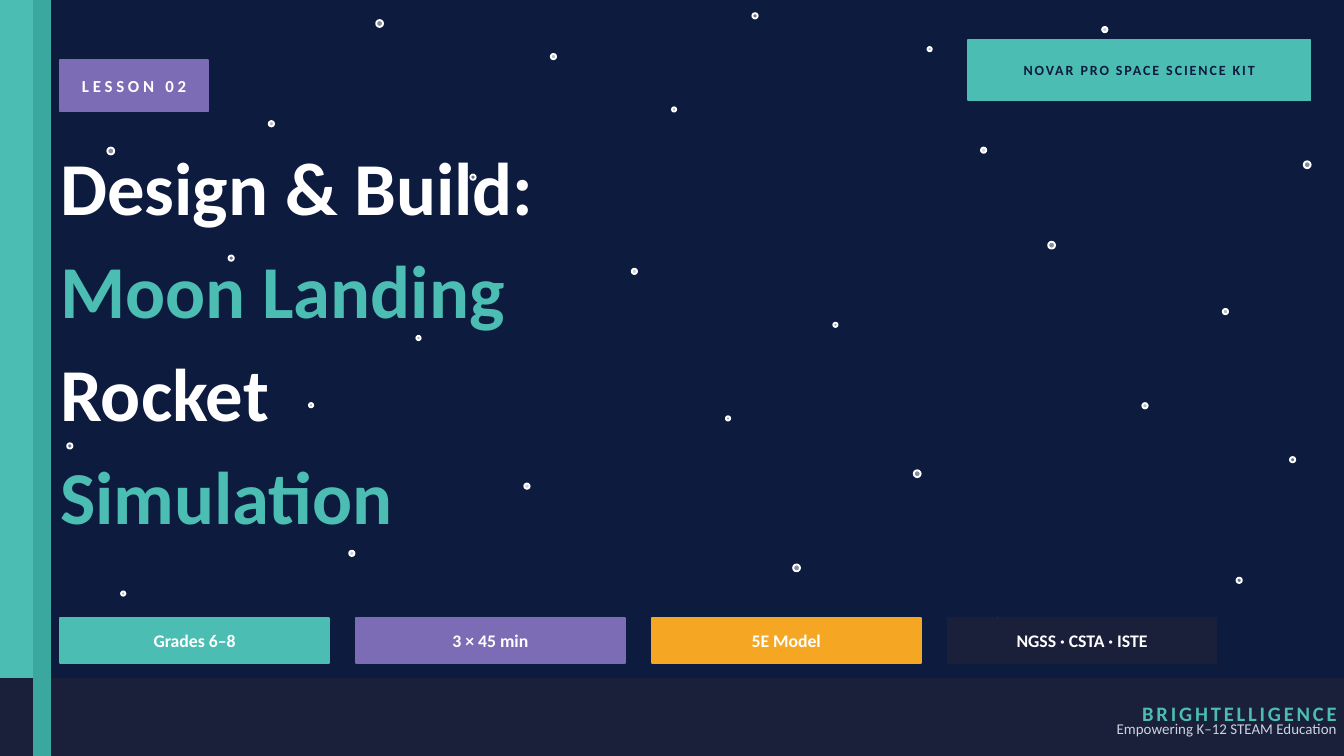
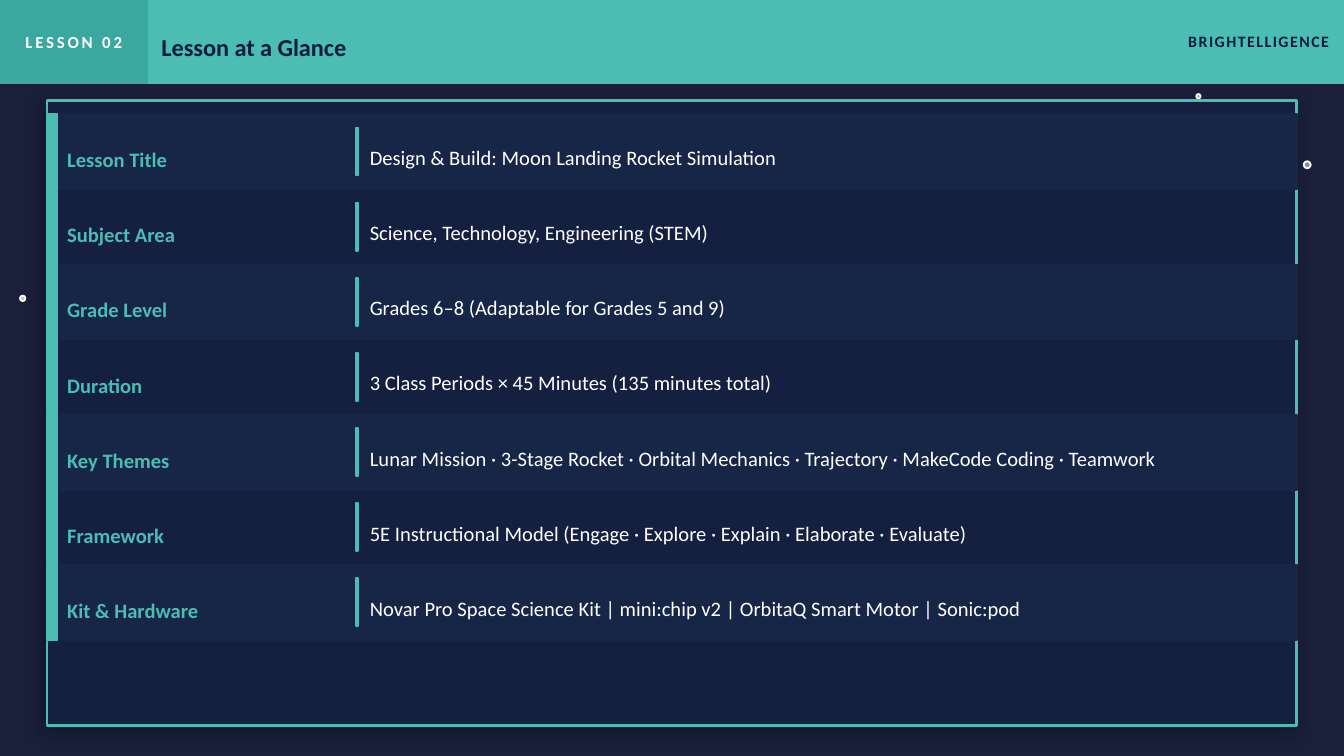
from dataclasses import dataclass

from lxml.etree import SubElement
from pptx import Presentation
from pptx.dml.color import RGBColor
from pptx.enum.shapes import MSO_SHAPE as Shape
from pptx.enum.text import MSO_ANCHOR as Anchor, MSO_AUTO_SIZE as AutoSize, PP_ALIGN as Align
from pptx.oxml.ns import qn
from pptx.util import Cm, Pt


@dataclass(frozen=True)
class Theme:
    font: str = "Calibri"
    navy: str = "0D1B3E"
    ink: str = "1A1F3A"
    panel: str = "152040"
    stripe: str = "172547"
    teal: str = "4BBDB3"
    deep_teal: str = "3AA89E"
    purple: str = "7B6CB5"
    orange: str = "F5A623"
    white: str = "FFFFFF"
    mist: str = "CBD5E1"
    cover_size: float = 40
    title_size: float = 13
    body_size: float = 11
    pill_size: float = 9.5
    tag_size: float = 9
    brand_size: float = 8.5
    tagline_size: float = 8
    kit_size: float = 7.5


theme = Theme()
brand = "BRIGHTELLIGENCE"


def add_box(slide, left, top, width, height, color, line_color=None, line_width=1, kind=Shape.RECTANGLE):
    shape = slide.shapes.add_shape(kind, Cm(left), Cm(top), Cm(width), Cm(height))
    shape.shadow.inherit = False
    shape.fill.solid()
    shape.fill.fore_color.rgb = RGBColor.from_string(color)
    shape.line.color.rgb = RGBColor.from_string(line_color or color)
    shape.line.width = Pt(line_width)
    return shape


def write(shape, lines, size, colors, bold=True, align=Align.LEFT, anchor=Anchor.MIDDLE,
          spacing=0, top=0, right=0, line_spacing=None):
    frame = shape.text_frame
    frame.word_wrap = True
    frame.auto_size = AutoSize.NONE
    frame.vertical_anchor = anchor
    frame.margin_left = frame.margin_bottom = 0
    frame.margin_top, frame.margin_right = Cm(top), Cm(right)
    frame.text = "\n".join(lines)
    for paragraph, color in zip(frame.paragraphs, colors):
        paragraph.alignment = align
        if line_spacing:
            paragraph.line_spacing = line_spacing
        font = paragraph.font
        font.name, font.size, font.bold = theme.font, Pt(size), bold
        font.color.rgb = RGBColor.from_string(color)
        if spacing:
            paragraph.runs[0].font._element.set("spc", str(round(spacing * 100)))


presentation = Presentation()
presentation.slide_width, presentation.slide_height = Cm(25.4), Cm(14.29)
title_only = presentation.slide_layouts[5]
cover = presentation.slides.add_slide(title_only)
glance = presentation.slides.add_slide(title_only)

star_sizes = {40: 0.1, 50: 0.13, 60: 0.08, 65: 0.08, 70: 0.1, 80: 0.1}
cover_stars = [
    (7.11, 0.38, 50), (10.41, 1.02, 70), (14.22, 0.25, 40), (17.53, 0.89, 65), (20.83, 0.51, 80),
    (2.03, 2.79, 50), (5.08, 2.29, 70), (8.89, 3.3, 40), (12.7, 2.03, 65), (18.54, 2.79, 80),
    (24.64, 3.05, 50), (4.32, 4.83, 40), (7.87, 6.35, 65), (11.94, 5.08, 80), (15.75, 6.1, 60),
    (19.81, 4.57, 50), (23.11, 5.84, 70), (1.27, 8.38, 40), (5.84, 7.62, 65), (9.91, 9.14, 80),
    (13.72, 7.87, 60), (17.27, 8.89, 50), (21.59, 7.62, 70), (24.38, 8.64, 40), (2.29, 11.18, 65),
    (6.6, 10.41, 80), (14.99, 10.67, 50), (18.8, 11.68, 70), (23.37, 10.92, 40),
]
glance_stars = [(22.61, 1.78, 60), (24.64, 3.05, 50), (0.38, 5.59, 70)]

for slide, background, stars in [(cover, theme.navy, cover_stars), (glance, theme.ink, glance_stars)]:
    slide.background.fill.solid()
    slide.background.fill.fore_color.rgb = RGBColor.from_string(background)
    for left, top, opacity in stars:
        size = star_sizes[opacity]
        star = add_box(slide, left, top, size, size, theme.white, kind=Shape.OVAL)
        fill_color = star.element.spPr.find(qn("a:solidFill"))[0]
        SubElement(fill_color, qn("a:alpha"), val=str(opacity * 1000))

add_box(cover, 0, 0, 0.64, 14.29, theme.teal)
add_box(cover, 0, 12.83, 25.4, 1.46, theme.ink)
add_box(cover, 0.64, 0, 0.3, 14.29, theme.deep_teal)
kit_badge = add_box(cover, 18.29, 0.76, 6.48, 1.14, theme.teal)
write(kit_badge, ["NOVAR PRO SPACE SCIENCE KIT"], theme.kit_size, [theme.navy], align=Align.CENTER, spacing=1)
lesson_badge = add_box(cover, 1.14, 1.14, 2.79, 0.97, theme.purple)
write(lesson_badge, ["LESSON 02"], theme.tag_size, [theme.white], align=Align.CENTER, spacing=2)

cover_title = cover.shapes.title
cover_title.element.getparent().append(cover_title.element)
cover_title.left, cover_title.top, cover_title.width, cover_title.height = Cm(1.14), Cm(2.41), Cm(16), Cm(9.14)
write(cover_title, ["Design & Build:", "Moon Landing", "Rocket", "Simulation"], theme.cover_size,
      [theme.white, theme.teal] * 2, anchor=Anchor.TOP, line_spacing=1.15)

pills = [("Grades 6–8", theme.teal), ("3 × 45 min", theme.purple),
         ("5E Model", theme.orange), ("NGSS · CSTA · ISTE", theme.ink)]
for index, (label, color) in enumerate(pills):
    pill = add_box(cover, 1.14 + index * 5.59, 11.68, 5.08, 0.86, color)
    write(pill, [label], theme.pill_size, [theme.white], align=Align.CENTER)

cover_brand = cover.shapes.add_textbox(Cm(19.05), Cm(12.95), Cm(6.22), Cm(1.07))
write(cover_brand, [brand], theme.body_size, [theme.teal], align=Align.RIGHT, spacing=1.5)
tagline = cover.shapes.add_textbox(Cm(13.97), Cm(13.41), Cm(11.3), Cm(0.71))
write(tagline, ["Empowering K–12 STEAM Education"], theme.tagline_size, [theme.mist], bold=False, align=Align.RIGHT)

add_box(glance, 0, 0, 25.4, 1.57, theme.teal)
lesson_tag = add_box(glance, 0, 0, 2.79, 1.57, theme.deep_teal)
write(lesson_tag, ["LESSON 02"], theme.tag_size, [theme.white], align=Align.CENTER, spacing=1.5)
glance_title = glance.shapes.title
glance_title.element.getparent().append(glance_title.element)
glance_title.left, glance_title.top, glance_title.width, glance_title.height = Cm(3.05), 0, Cm(19.05), Cm(1.57)
write(glance_title, ["Lesson at a Glance"], theme.title_size, [theme.navy], top=0.2)
header_brand = glance.shapes.add_textbox(Cm(19.56), 0, Cm(5.84), Cm(1.57))
write(header_brand, [brand], theme.brand_size, [theme.navy], align=Align.RIGHT, spacing=0.8, right=0.28)

panel = add_box(glance, 0.89, 1.9, 23.62, 11.81, theme.panel, theme.teal, 1.5)
effects = panel.element.spPr.find(qn("a:effectLst"))
shadow = SubElement(effects, qn("a:outerShdw"), blurRad=str(Pt(8)), dist=str(Pt(3)),
                    dir=str(135 * 60000), algn="bl", rotWithShape="0")
shadow_color = SubElement(shadow, qn("a:srgbClr"), val="000000")
SubElement(shadow_color, qn("a:alpha"), val="25000")

facts = [
    ("Lesson Title", "Design & Build: Moon Landing Rocket Simulation"),
    ("Subject Area", "Science, Technology, Engineering (STEM)"),
    ("Grade Level", "Grades 6–8 (Adaptable for Grades 5 and 9)"),
    ("Duration", "3 Class Periods × 45 Minutes (135 minutes total)"),
    ("Key Themes", "Lunar Mission · 3-Stage Rocket · Orbital Mechanics · Trajectory · MakeCode Coding · Teamwork"),
    ("Framework", "5E Instructional Model (Engage · Explore · Explain · Elaborate · Evaluate)"),
    ("Kit & Hardware", "Novar Pro Space Science Kit | mini:chip v2 | OrbitaQ Smart Motor | Sonic:pod"),
]
row_height = 1.42
for index, (label, detail) in enumerate(facts):
    top = 2.16 + index * row_height
    if index % 2 == 0:
        add_box(glance, 0.89, top, 23.62, row_height, theme.stripe)
    add_box(glance, 0.89, top, 0.2, row_height, theme.teal)
    label_box = glance.shapes.add_textbox(Cm(1.27), Cm(top + 0.13), Cm(5.33), Cm(1.17))
    write(label_box, [label], theme.body_size, [theme.teal], top=0.28)
    add_box(glance, 6.73, top + 0.25, 0.03, 0.91, theme.teal)
    detail_box = glance.shapes.add_textbox(Cm(6.99), Cm(top + 0.13), Cm(17.15), Cm(1.17))
    write(detail_box, [detail], theme.body_size, [theme.white], bold=False, top=0.2)

presentation.save("out.pptx")
